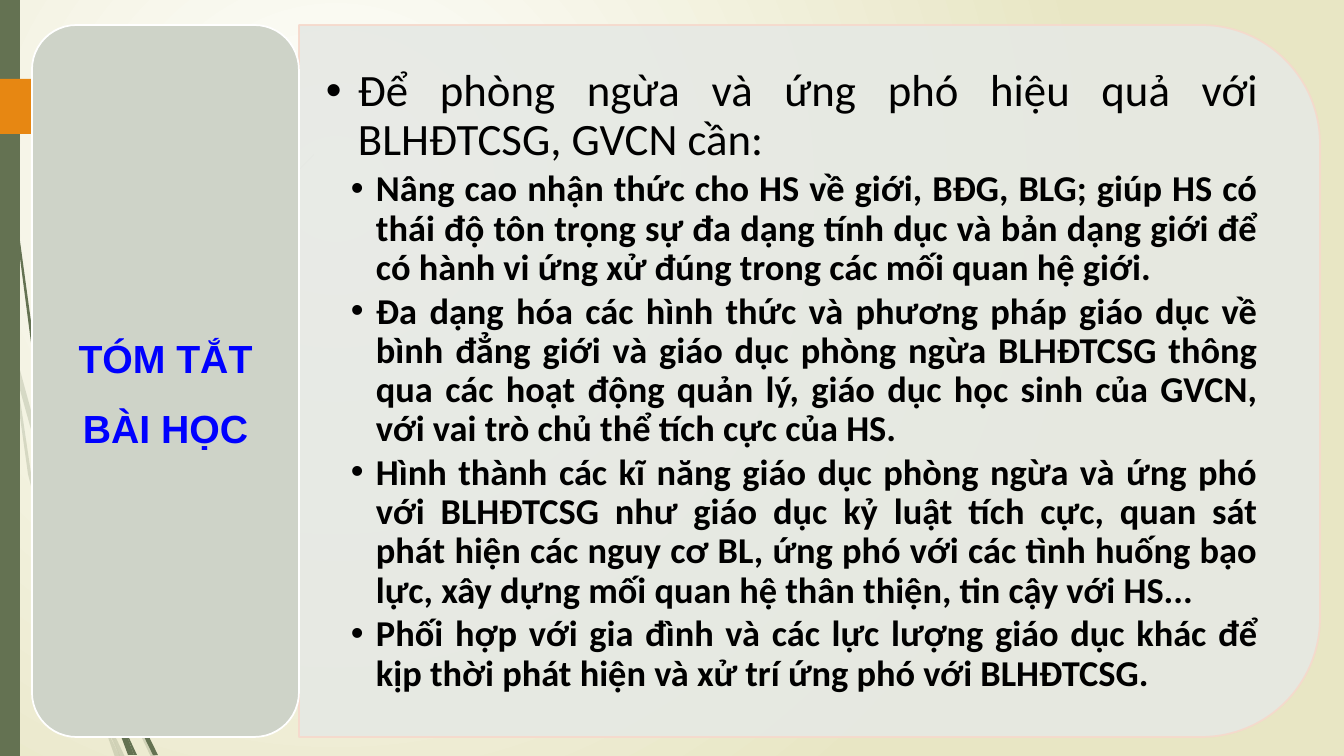
from lxml.etree import SubElement
from pptx import Presentation
from pptx.dml.color import RGBColor
from pptx.enum.shapes import MSO_SHAPE
from pptx.enum.text import MSO_ANCHOR, PP_ALIGN
from pptx.oxml.ns import qn
from pptx.util import Pt

PX = 914400 / 100.8
COLORS = {
    "white": "FFFFFF", "cream": "E8E6C4", "olive": "647252", "orange": "E78712",
    "panel": "E6E9E4", "panel_edge": "F6D9CC", "sage": "CED3C8",
    "blue": "0000FF", "black": "000000",
}

LEAD = "Để phòng ngừa và ứng phó hiệu quả với BLHĐTCSG, GVCN cần:"
POINTS = [
    "Nâng cao nhận thức cho HS về giới, BĐG, BLG; giúp HS có thái độ tôn trọng sự đa dạng "
    "tính dục và bản dạng giới để có hành vi ứng xử đúng trong các mối quan hệ giới.",
    "Đa dạng hóa các hình thức và phương pháp giáo dục về bình đẳng giới và giáo dục phòng "
    "ngừa BLHĐTCSG thông qua các hoạt động quản lý, giáo dục học sinh của GVCN, với vai trò "
    "chủ thể tích cực của HS.",
    "Hình thành các kĩ năng giáo dục phòng ngừa và ứng phó với BLHĐTCSG như giáo dục kỷ luật "
    "tích cực, quan sát phát hiện các nguy cơ BL, ứng phó với các tình huống bạo lực, xây dựng "
    "mối quan hệ thân thiện, tin cậy với HS...",
    "Phối hợp với gia đình và các lực lượng giáo dục khác để kịp thời phát hiện và xử trí "
    "ứng phó với BLHĐTCSG.",
]

PALE_WISPS = [
    [(11, 353), (9, 325), (0, 284), (0, 301), (10, 347)],
    [(58, 526), (85, 604), (86, 591), (62, 524), (14, 348), (17, 379)],
    [(93, 612), (89, 601), (89, 615), (124, 700), (151, 757), (156, 757), (128, 698)],
    [(120, 757), (125, 757), (106, 717)],
    [(94, 688), (71, 624), (31, 473), (17, 379), (11, 353), (28, 474), (66, 626),
     (93, 699), (102, 720)],
    [(89, 589), (111, 466), (161, 352), (231, 247), (270, 200), (314, 155), (314, 154),
     (270, 199), (230, 246), (159, 351), (108, 465), (86, 589), (89, 601)],
    [(102, 720), (115, 757), (120, 757)],
    [(97, 698), (94, 688), (100, 713), (120, 757), (106, 717)],
]
DARK_WISPS = [
    [(7, 111), (17, 235), (33, 358), (56, 481), (57, 485), (55, 457), (36, 358),
     (19, 234), (8, 110), (4, 0), (3, 0)],
    [(114, 654), (111, 646), (112, 661), (133, 714), (153, 755), (158, 755), (137, 712)],
    [(134, 755), (137, 755), (123, 725)],
    [(118, 728), (128, 755), (132, 755)],
    [(117, 712), (111, 697), (118, 728), (131, 755), (134, 755), (123, 725)],
]


def px(value):
    return round(value * PX)


def color(name):
    return RGBColor.from_string(COLORS[name])


def paint(shape, fill, line=None, opacity=100):
    shape.shadow.inherit = False
    shape.fill.solid()
    shape.fill.fore_color.rgb = color(fill)
    if line:
        shape.line.color.rgb = color(line)
        shape.line.width = Pt(1.25)
    else:
        shape.line.fill.background()
    if opacity < 100:
        for tint in shape.element.spPr.iter(qn("a:srgbClr")):
            SubElement(tint, qn("a:alpha"), val=str(opacity * 1000))


def add_block(page, kind, box, fill, **look):
    block = page.shapes.add_shape(kind, *map(px, box))
    paint(block, fill, **look)
    return block


def add_text_frame(page, box, side, top):
    frame = page.shapes.add_textbox(*map(px, box)).text_frame
    frame.word_wrap = True
    frame.vertical_anchor = MSO_ANCHOR.MIDDLE
    frame.margin_left = frame.margin_right = px(side)
    frame.margin_top = frame.margin_bottom = px(top)
    return frame


def write(para, text, *, size, font, ink, bold=False, align=PP_ALIGN.JUSTIFY,
          leading=0.9, after=0, indent=None, hang=0):
    """Fill one paragraph; an indent also gives it a hanging bullet."""
    para.alignment, para.line_spacing, para.space_after = align, leading, Pt(after)
    span = para.add_run()
    span.text = text
    span.font.size, span.font.name, span.font.bold = Pt(size), font, bold
    span.font.color.rgb = color(ink)
    if indent:
        props = para._p.get_or_add_pPr()
        props.set("marL", str(px(indent)))
        props.set("indent", str(-px(hang)))
        SubElement(props, qn("a:buFont"), typeface="Arial")
        SubElement(props, qn("a:buChar"), char="•")


def add_background(page):
    fill = page.background.fill
    fill.gradient()
    for stop, name in zip(fill.gradient_stops, ("white", "cream")):
        stop.color.rgb = color(name)
    gradient = next(page.element.iter(qn("a:gradFill")))
    gradient.remove(gradient.find(qn("a:lin")))
    circle = SubElement(gradient, qn("a:path"), path="circle")
    SubElement(circle, qn("a:fillToRect"), l="50000", t="50000", r="100000", b="100000")


def add_left_decoration(page, box):
    left, top, width, height = box
    for wisps, opacity in ((PALE_WISPS, 20), (DARK_WISPS, 100)):
        for (x, y), *rest in wisps:
            outline = page.shapes.build_freeform(left + x, top + y, scale=PX)
            outline.add_line_segments([(left + a, top + b) for a, b in rest], close=True)
            paint(outline.convert_to_shape(), "olive", opacity=opacity)
    add_block(page, MSO_SHAPE.RECTANGLE, (left, top, 20, height), "olive")
    add_block(page, MSO_SHAPE.PENTAGON, (left, top + 79, width, 55), "orange")


def add_summary(page, box):
    left, top, width, height = box
    shift = (width - height) / 2
    panel = add_block(page, MSO_SHAPE.ROUND_2_SAME_RECTANGLE,
                      (left + shift, top - shift, height, width),
                      "panel", line="panel_edge", opacity=90)
    panel.rotation = 90
    frame = add_text_frame(page, (left, top + 35, width - 34, height - 70), 27, 14)
    write(frame.paragraphs[0], LEAD, size=32, font="Calibri", ink="black",
          after=4, indent=32, hang=32)
    for point in POINTS:
        para = frame.add_paragraph()
        para.level = 1
        write(para, point, size=26, font="Calibri", ink="black", bold=True,
              after=3, indent=50, hang=25)


def add_title(page, box):
    left, top, width, height = box
    add_block(page, MSO_SHAPE.ROUNDED_RECTANGLE, box, "sage", line="white")
    frame = add_text_frame(page, (left + 13, top + 13, width - 26, height - 26), 12, 6)
    write(frame.paragraphs[0], "TÓM TẮT BÀI HỌC", size=28, font="Arial", ink="blue",
          bold=True, align=PP_ALIGN.CENTER, leading=1.5)


def main():
    deck = Presentation()
    deck.slide_width, deck.slide_height = px(1344), px(756)
    page = deck.slides.add_slide(deck.slide_layouts[6])
    add_background(page)
    add_left_decoration(page, (0, 0, 175, 756))
    add_summary(page, (299, 25, 1021, 712))
    add_title(page, (32, 25, 267, 712))
    deck.save("out.pptx")


if __name__ == "__main__":
    main()
